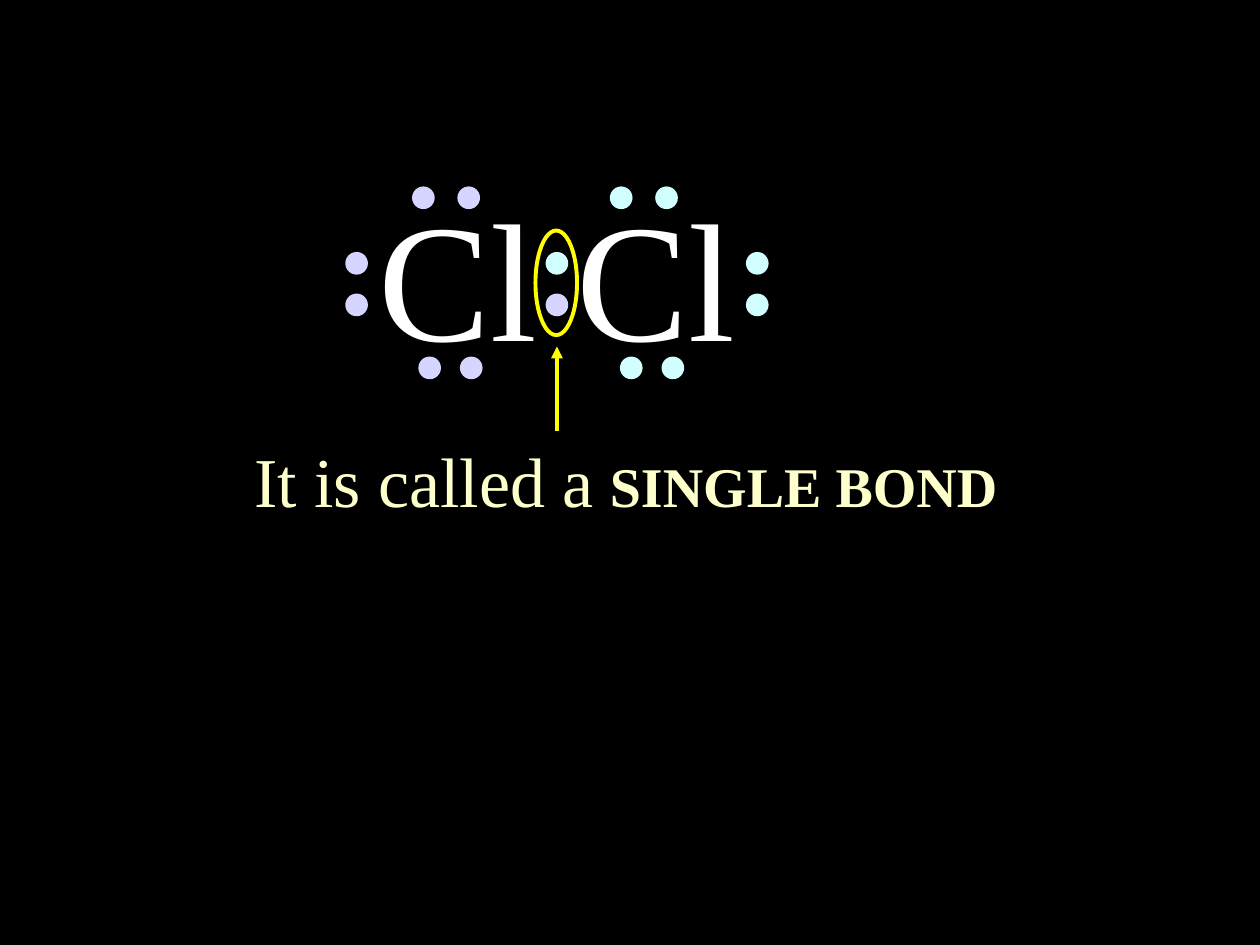
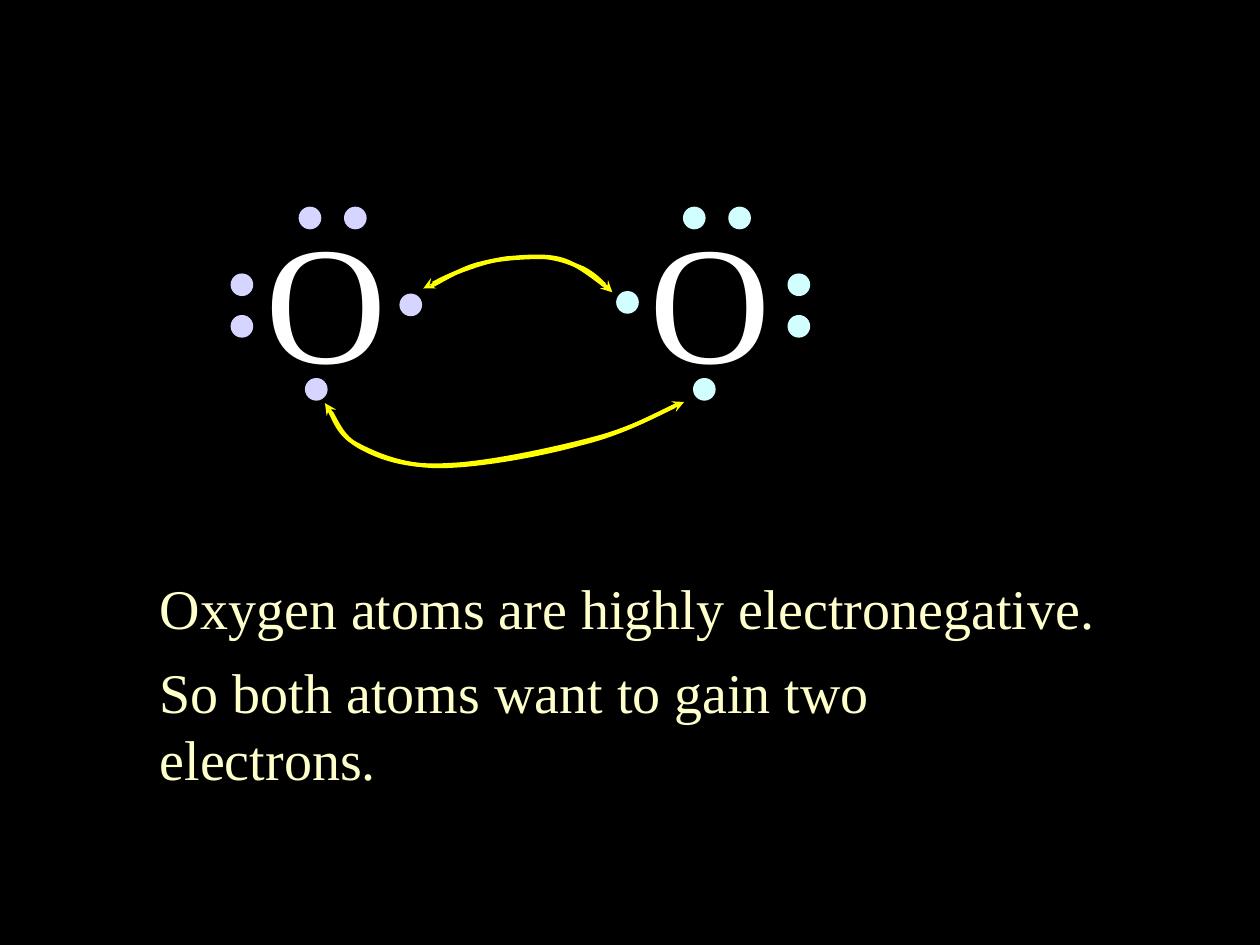
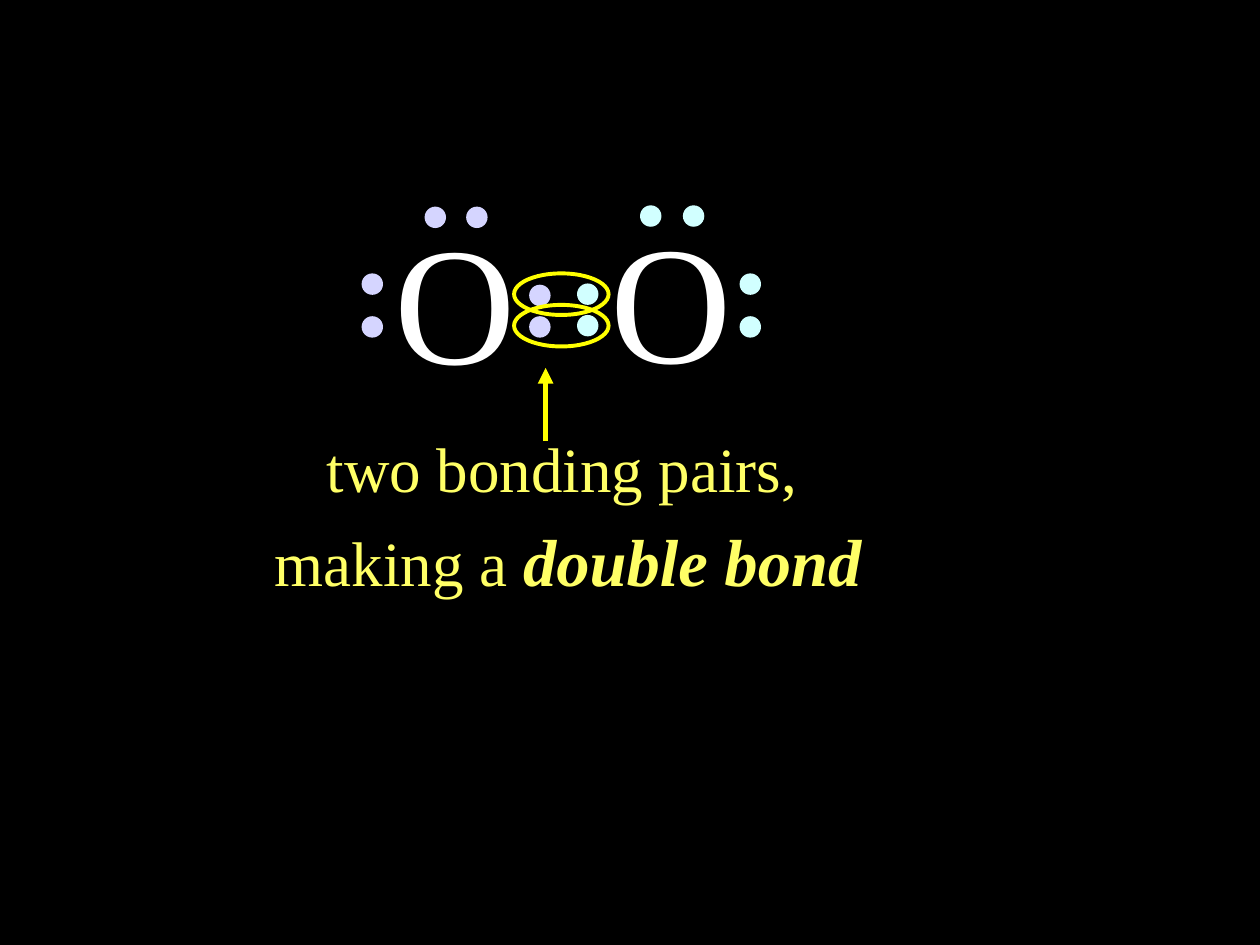
"""Build three slides on electron sharing and covalent bonds."""
from lxml import etree
from pptx import Presentation
from pptx.dml.color import RGBColor
from pptx.enum.shapes import MSO_CONNECTOR, MSO_SHAPE
from pptx.enum.text import MSO_AUTO_SIZE, PP_ALIGN
from pptx.oxml.ns import qn
from pptx.util import Inches, Pt

OVAL = MSO_SHAPE.OVAL
STRAIGHT = MSO_CONNECTOR.STRAIGHT
GROW = MSO_AUTO_SIZE.SHAPE_TO_FIT_TEXT
LEFT, CENTER = PP_ALIGN.LEFT, PP_ALIGN.CENTER

COLUMNS, ROWS = 10, 7.5
CELL = Inches(1)
FONT = "Times New Roman"
COLORS = {
    "background": "000000",
    "symbol": "FFFFFF",
    "left atom": "D5D5FF",
    "right atom": "D1FFFF",
    "bond": "FFFF00",
    "statement": "FFFFCC",
    "caption": "FFFF66",
}


def grid(*cells):
    """Convert grid columns and rows to lengths."""
    return [round(cell * CELL) for cell in cells]


def color(name):
    """Look up a palette colour."""
    return RGBColor.from_string(COLORS[name])


def add_slide(deck):
    """Add a blank slide with the shared background."""
    slide = deck.slides.add_slide(deck.slide_layouts[6])
    slide.background.fill.solid()
    slide.background.fill.fore_color.rgb = color("background")
    return slide


def add_text(slide, place, parts, color_name, align=LEFT, wrap=False):
    """Write one paragraph from (text, size, bold, italic) parts."""
    frame = slide.shapes.add_textbox(*grid(*place)).text_frame
    frame.word_wrap = wrap
    frame.auto_size = GROW
    line = frame.paragraphs[0]
    line.alignment = align
    line.font.name = FONT
    line.font.color.rgb = color(color_name)
    for words, size, bold, italic in parts:
        run = line.add_run()
        run.text = words
        run.font.size = Pt(size)
        run.font.bold = bold
        run.font.italic = italic


def plain(words, size):
    """Give a single regular text part."""
    return [(words, size, False, False)]


def beside(x, y, gap=0.36):
    """Place two electrons next to each other."""
    return [(x, y), (x + gap, y)]


def stacked(x, y, gap=0.33):
    """Place two electrons one above the other."""
    return [(x, y), (x, y + gap)]


def add_atom(slide, symbol, left, top, width, side, electrons, size=0.18):
    """Draw a symbol with electrons placed relative to its corner."""
    add_text(slide, (left, top, width, 1.7), plain(symbol, 96), "symbol")
    for x, y in electrons:
        electron = slide.shapes.add_shape(OVAL, *grid(left + x, top + y, size, size))
        electron.shadow.inherit = False
        electron.fill.solid()
        electron.fill.fore_color.rgb = color(side)
        electron.line.fill.background()


def add_ring(slide, *place):
    """Circle a bonding pair."""
    ring = slide.shapes.add_shape(OVAL, *grid(*place))
    ring.shadow.inherit = False
    ring.fill.background()
    style_line(ring)


def style_line(mark, weight=2.25, head=None):
    """Give a mark the bond colour, a weight and an arrowhead."""
    mark.line.color.rgb = color("bond")
    mark.line.width = Pt(weight)
    if head:
        outline = mark.line._get_or_add_ln()
        etree.SubElement(outline, qn("a:tailEnd"), type=head)


def add_pointer(slide, x, start, end, weight):
    """Point upwards from a caption to the bond."""
    pointer = slide.shapes.add_connector(STRAIGHT, *grid(x, start, x, end))
    style_line(pointer, weight, "triangle")
    etree.SubElement(pointer._element.spPr, qn("a:effectLst"))


def add_curve(slide, points):
    """Draw a curved arrow through Bezier points, three to a segment."""
    emu = [tuple(grid(*point)) for point in points]
    builder = slide.shapes.build_freeform(*emu[0])
    builder.add_line_segments(emu[1:], close=False)
    curve = builder.convert_to_shape()
    curve.shadow.inherit = False
    curve.fill.background()
    style_line(curve, head="stealth")
    outline = curve._element.find(".//" + qn("a:path"))
    steps = outline.findall(qn("a:lnTo"))
    for first in range(0, len(steps), 3):
        segment = etree.SubElement(outline, qn("a:cubicBezTo"))
        for step in steps[first:first + 3]:
            segment.append(step[0])
            outline.remove(step)


def single_bond(deck):
    """Show chlorine sharing one pair."""
    slide = add_slide(deck)
    top = 1.33
    add_atom(slide, "Cl", 2.91, top, 1.46, "left atom",
             stacked(-0.17, 0.67) + beside(0.36, 0.15)
             + beside(0.41, 1.5, 0.33) + [(1.42, 1)])
    add_atom(slide, "Cl", 4.48, top, 1.46, "right atom",
             stacked(1.44, 0.67) + beside(0.36, 0.15)
             + beside(0.44, 1.5, 0.33) + [(-0.15, 0.67)])
    add_ring(slide, 4.25, 1.83, 0.33, 0.83)
    add_pointer(slide, 4.42, 3.42, 2.75, 2.25)
    add_text(slide, (1.92, 3.42, 6.1, 0.77),
             [("It is called a", 40, False, False), (" ", 36, False, False),
              ("SINGLE BOND", 32, True, False)], "statement")


def oxygen_atoms(deck):
    """Show two oxygen atoms offering electrons to each other."""
    slide = add_slide(deck)
    top = 1.5
    statements = [
        ("Oxygen atoms are highly electronegative.", 4.5, 7.8, 0.63),
        ("So both atoms want to gain two electrons.", 5.17, 7.4, 1.16),
    ]
    for words, row, width, height in statements:
        add_text(slide, (1.17, row, width, height), plain(words, 32),
                 "statement", wrap=True)
    add_atom(slide, "O", 5.06, top, 1.16, "right atom",
             stacked(1.19, 0.67) + beside(0.36, 0.14) + [(-0.17, 0.81), (0.44, 1.5)])
    add_atom(slide, "O", 2.01, top, 1.16, "left atom",
             stacked(-0.18, 0.67) + beside(0.36, 0.14) + [(1.16, 0.83), (0.41, 1.5)])
    curves = [
        [(3.42, 2.27), (3.49, 2.24), (3.67, 2.12), (3.82, 2.09), (3.97, 2.05),
         (4.17, 2.04), (4.31, 2.04), (4.44, 2.05), (4.53, 2.09), (4.63, 2.13),
         (4.72, 2.18), (4.82, 2.28), (4.86, 2.32)],
        [(2.61, 3.25), (2.64, 3.29), (2.68, 3.45), (2.82, 3.52), (2.97, 3.6),
         (3.19, 3.7), (3.49, 3.7), (3.79, 3.7), (4.29, 3.61), (4.61, 3.52),
         (4.94, 3.44), (5.26, 3.26), (5.43, 3.19)],
        [(4.83, 2.29), (4.77, 2.25), (4.6, 2.1), (4.46, 2.06), (4.33, 2.02),
         (4.15, 2.04), (4.02, 2.05), (3.88, 2.07), (3.77, 2.11), (3.66, 2.15),
         (3.55, 2.19), (3.42, 2.26), (3.36, 2.29)],
        [(5.38, 3.21), (5.27, 3.26), (5.03, 3.4), (4.72, 3.48), (4.42, 3.56),
         (3.87, 3.68), (3.56, 3.69), (3.26, 3.71), (3.05, 3.65), (2.88, 3.56),
         (2.72, 3.48), (2.64, 3.27), (2.58, 3.2)],
    ]
    for points in curves:
        add_curve(slide, points)


def double_bond(deck):
    """Show oxygen sharing two pairs."""
    slide = add_slide(deck)
    add_text(slide, (2.49, 3.36, 3.94, 0.7),
             plain("two bonding pairs,", 36), "caption", CENTER)
    add_atom(slide, "O", 4.75, 1.5, 1.16, "right atom",
             stacked(-0.17, 0.75, 0.25) + beside(0.33, 0.13, 0.34)
             + stacked(1.12, 0.67, 0.34), 0.17)
    add_atom(slide, "O", 3.03, 1.51, 1.16, "left atom",
             stacked(1.17, 0.75, 0.25) + beside(0.34, 0.13, 0.33)
             + stacked(-0.16, 0.66, 0.34), 0.17)
    for top in (2.17, 2.42):
        add_ring(slide, 4.08, top, 0.75, 0.33)
    add_pointer(slide, 4.33, 3.5, 2.92, 3)
    add_text(slide, (2.08, 4.08, 4.86, 0.73),
             [("making a ", 36, False, False), ("double bond", 38, True, True)],
             "caption", CENTER)


def main():
    """Build and save the deck."""
    deck = Presentation()
    deck.slide_width, deck.slide_height = grid(COLUMNS, ROWS)
    single_bond(deck)
    oxygen_atoms(deck)
    double_bond(deck)
    deck.save("out.pptx")


if __name__ == "__main__":
    main()
